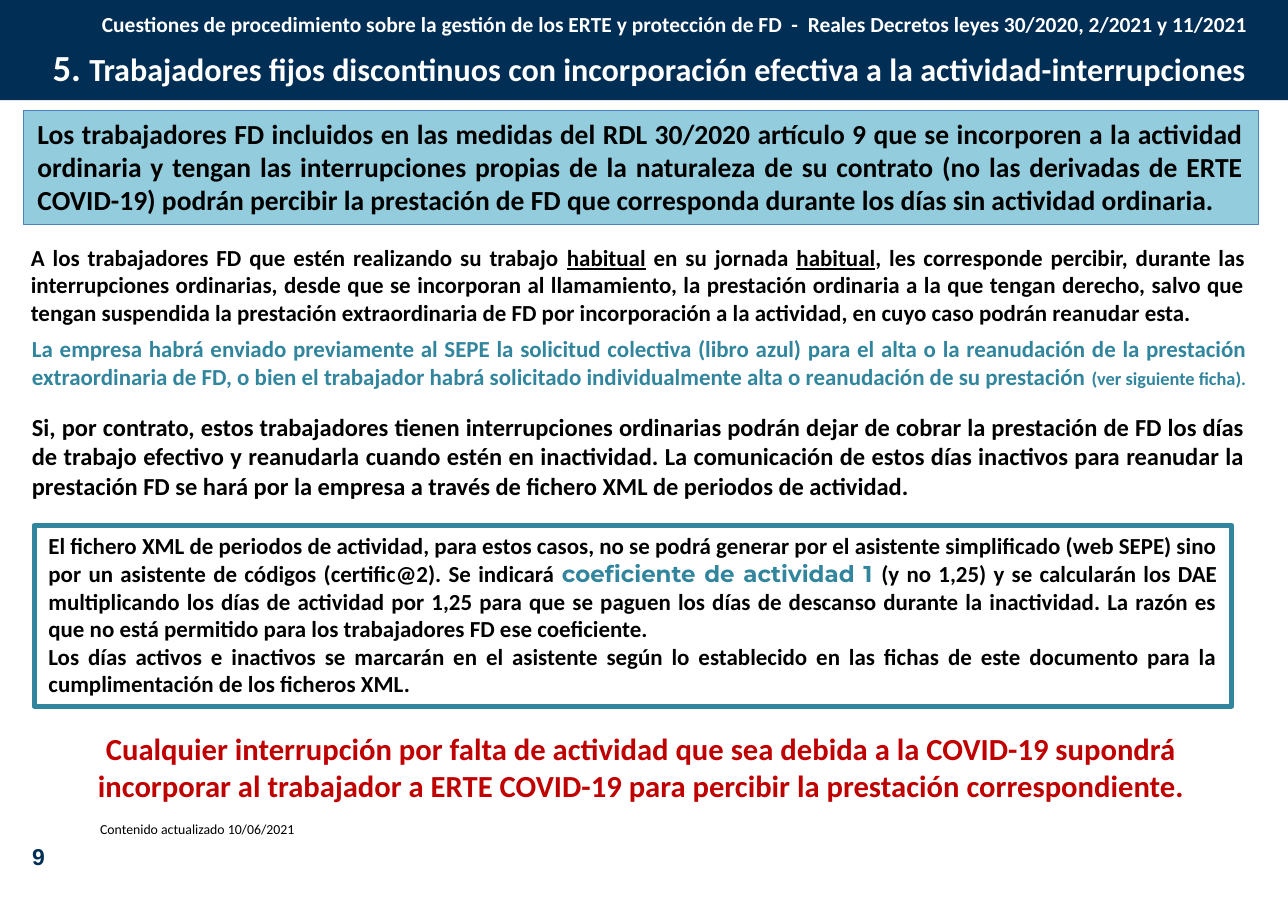
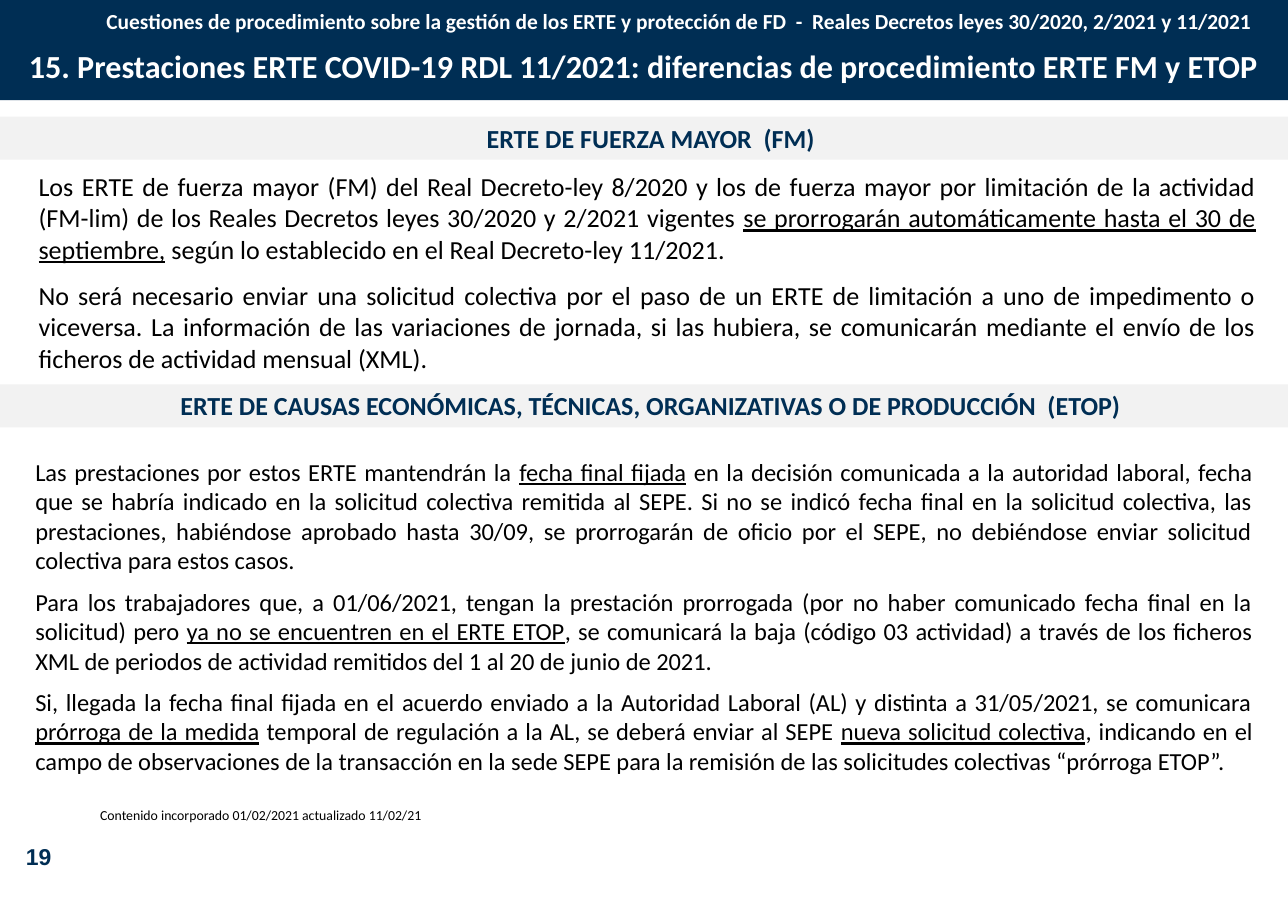
from pptx import Presentation
from pptx.dml.color import RGBColor
from pptx.enum.shapes import MSO_SHAPE
from pptx.enum.text import MSO_ANCHOR, MSO_AUTO_SIZE, PP_ALIGN
from pptx.util import Emu, Pt

PX = 9144  # 100 px to the inch
WIDTH, HEIGHT = 1169, 827
BAND_HEIGHT = 91

NAVY = RGBColor(0x00, 0x2E, 0x54)
WHITE = RGBColor(0xFF, 0xFF, 0xFF)
BLACK = RGBColor(0x00, 0x00, 0x00)
SKY = RGBColor(0x93, 0xCD, 0xDD)
BLUE = RGBColor(0x4F, 0x81, 0xBD)
TEAL = RGBColor(0x31, 0x85, 0x9C)
RED = RGBColor(0xC0, 0x00, 0x00)
GREY = RGBColor(0xF2, 0xF2, 0xF2)

WIDE = (13, 6, 13, 6)  # insets: left, top, right, bottom
NARROW = (10, 5, 10, 5)
INDENTED = (22, 5, 10, 5)

SERIES = ("Cuestiones de procedimiento sobre la gestión de los ERTE y protección de FD"
          "  -  Reales Decretos leyes 30/2020, 2/2021 y 11/2021")
UNDERLINED = {"underline": True}


def px(length):
    return Emu(length * PX)


def format_font(font, values):
    for name, value in values.items():
        if name == "color":
            font.color.rgb = value
        else:
            setattr(font, name, Pt(value) if name == "size" else value)


def write(shape, paragraphs, look, align=PP_ALIGN.JUSTIFY, insets=WIDE,
          gap=0, anchor=MSO_ANCHOR.TOP):
    """Each paragraph is a list of runs: a string, or (string, own format)."""
    frame = shape.text_frame
    frame_values = {"word_wrap": True, "auto_size": MSO_AUTO_SIZE.NONE,
                    "vertical_anchor": anchor}
    sides = ("margin_left", "margin_top", "margin_right", "margin_bottom")
    frame_values.update(zip(sides, map(px, insets)))
    for name, value in frame_values.items():
        setattr(frame, name, value)
    base = {"name": "Calibri", "color": BLACK, "bold": False, **look}
    for index, runs in enumerate(paragraphs):
        paragraph = frame.add_paragraph() if index else frame.paragraphs[0]
        paragraph.alignment = align
        paragraph.space_before = Pt(gap if index else 0)
        for item in runs:
            text, own = (item, {}) if isinstance(item, str) else item
            run = paragraph.add_run()
            run.text = text
            format_font(run.font, {**base, **own})


def add_text(slide, box, paragraphs, look, **layout):
    write(slide.shapes.add_textbox(*map(px, box)), paragraphs, look, **layout)


def add_panel(slide, box, fill=None, line=None, weight=0.75):
    panel = slide.shapes.add_shape(MSO_SHAPE.RECTANGLE, *map(px, box))
    panel.shadow.inherit = False
    if fill is None:
        panel.fill.background()
    else:
        panel.fill.solid()
        panel.fill.fore_color.rgb = fill
    if line is None:
        panel.line.fill.background()
    else:
        panel.line.color.rgb = line
        panel.line.width = Pt(weight)
    return panel


def add_header(slide, series_box, title_box, title_runs, insets):
    # Navy band lies behind the title placeholder
    title = slide.shapes.title
    band = add_panel(slide, (0, 0, WIDTH, BAND_HEIGHT), fill=NAVY)
    title.element.addprevious(band.element)
    for name, length in zip(("left", "top", "width", "height"), title_box):
        setattr(title, name, px(length))
    heading = {"size": 21, "color": WHITE, "bold": True}
    write(title, [title_runs], heading, align=PP_ALIGN.CENTER, insets=insets)
    add_text(slide, series_box, [[SERIES]], {**heading, "size": 14},
             align=PP_ALIGN.RIGHT)


def add_footer(slide, number, note_box, note):
    number_panel = add_panel(slide, (0, 755, 70, 44), fill=WHITE)
    write(number_panel, [[number]],
          {"name": "Arial", "size": 15, "color": NAVY, "bold": True},
          align=PP_ALIGN.CENTER, insets=(12, 6, 12, 6), anchor=MSO_ANCHOR.MIDDLE)
    add_text(slide, note_box, [[note]], {"size": 9},
             align=PP_ALIGN.LEFT, insets=NARROW)


def add_section_bar(slide, top, heading):
    bar = add_panel(slide, (0, top, WIDTH, 39), fill=GREY)
    write(bar, [[heading]], {"size": 17, "color": NAVY, "bold": True},
          align=PP_ALIGN.CENTER, insets=INDENTED)


def build_seasonal_workers(slide):
    add_header(slide, (-23, 4, WIDTH, 36), (5, 35, WIDTH, 53),
               [("5. ", {"size": 24}),
                "Trabajadores fijos discontinuos con incorporación efectiva "
                "a la actividad-interrupciones"], WIDE)

    # Main rule
    rule = add_panel(slide, (21, 100, 1121, 104), fill=SKY, line=BLUE)
    write(rule, [[
        "Los trabajadores FD incluidos en las medidas del RDL 30/2020 artículo 9 que se "
        "incorporen a la actividad ordinaria y tengan las interrupciones propias de la "
        "naturaleza de su contrato (no las derivadas de ERTE COVID-19) podrán percibir la "
        "prestación de FD que corresponda durante los días sin actividad ordinaria."]],
        {"size": 18, "bold": True})

    # Explanations
    body = {"size": 15, "bold": True}
    add_text(slide, (15, 215, 1128, 89), [[
        "A los trabajadores FD que estén realizando su trabajo ",
        ("habitual", UNDERLINED), " en su jornada ", ("habitual", UNDERLINED),
        ", les corresponde percibir, durante las interrupciones ordinarias, desde que se "
        "incorporan al llamamiento, la prestación ordinaria a la que tengan derecho, salvo "
        "que tengan suspendida la prestación extraordinaria de FD por incorporación a la "
        "actividad, en cuyo caso podrán reanudar esta."]], body)
    add_text(slide, (7, 299, 1135, 61), [[
        "La empresa habrá enviado previamente al SEPE la solicitud colectiva (libro azul) "
        "para el alta o la reanudación de la prestación extraordinaria de FD, o bien el "
        "trabajador habrá solicitado individualmente alta o reanudación de su prestación ",
        ("(ver siguiente ficha).", {"size": 12})]],
        {**body, "color": TEAL}, insets=INDENTED)
    add_text(slide, (16, 368, 1127, 94), [[
        "Si, por contrato, estos trabajadores tienen interrupciones ordinarias podrán dejar "
        "de cobrar la prestación de FD los días de trabajo efectivo y reanudarla cuando "
        "estén en inactividad. La comunicación de estos días inactivos para reanudar la "
        "prestación FD se hará por la empresa a través de fichero XML de periodos de "
        "actividad."]], {**body, "size": 16})

    # XML file instructions
    xml_panel = add_panel(slide, (31, 477, 1087, 164), line=TEAL, weight=3.25)
    write(xml_panel, [[
        "El fichero XML de periodos de actividad, para estos casos, no se podrá generar por "
        "el asistente simplificado (web SEPE) sino por un asistente de códigos (certific@2). "
        "Se indicará ",
        ("coeficiente de actividad 1 ", {"name": "Montserrat", "color": TEAL}),
        "(y no 1,25) y se calcularán los DAE multiplicando los días de actividad por 1,25 "
        "para que se paguen los días de descanso durante la inactividad. La razón es que no "
        "está permitido para los trabajadores FD ese coeficiente."], [
        "Los días activos e inactivos se marcarán en el asistente según lo establecido en "
        "las fichas de este documento para la cumplimentación de los ficheros XML."]], body)

    # Warning
    add_text(slide, (15, 657, 1134, 80), [
        ["Cualquier interrupción por falta de actividad que sea debida a la COVID-19 supondrá"],
        ["incorporar al trabajador a ERTE COVID-19 para percibir la prestación "
         "correspondiente."]],
        {"size": 20, "color": RED, "bold": True}, align=PP_ALIGN.CENTER)
    add_footer(slide, "9", (81, 740, 228, 25), "Contenido actualizado 10/06/2021")


def build_procedure_differences(slide):
    add_header(slide, (-19, 1, WIDTH, 36), (-3, 37, 1174, 50),
               ["15. Prestaciones ERTE COVID-19 RDL 11/2021: diferencias de procedimiento "
                "ERTE FM y ETOP"], NARROW)

    # Force majeure
    add_section_bar(slide, 106, "ERTE DE FUERZA MAYOR  (FM)")
    add_text(slide, (22, 149, 1131, 199), [[
        "Los ERTE de fuerza mayor (FM) del Real Decreto-ley 8/2020 y los de fuerza mayor por "
        "limitación de la actividad (FM-lim) de los Reales Decretos leyes 30/2020 y 2/2021 "
        "vigentes ",
        ("se prorrogarán automáticamente hasta el 30 de septiembre,", UNDERLINED),
        " según lo establecido en el Real Decreto-ley 11/2021."], [
        "No será necesario enviar una solicitud colectiva por el paso de un ERTE de "
        "limitación a uno de impedimento o viceversa. La información de las variaciones de "
        "jornada, si las hubiera, se comunicarán mediante el envío de los ficheros de "
        "actividad mensual (XML)."]], {"size": 17}, gap=10)

    # Economic, technical, organisational or production causes
    add_section_bar(slide, 349, "ERTE DE CAUSAS ECONÓMICAS, TÉCNICAS, ORGANIZATIVAS "
                                "O DE PRODUCCIÓN  (ETOP)")
    add_text(slide, (19, 409, 1131, 305), [[
        "Las prestaciones por estos ERTE mantendrán la ",
        ("fecha final fijada", UNDERLINED),
        " en la decisión comunicada a la autoridad laboral, fecha que se habría indicado en "
        "la solicitud colectiva remitida al SEPE. Si no se indicó fecha final en la "
        "solicitud colectiva, las prestaciones, habiéndose aprobado hasta 30/09, se "
        "prorrogarán de oficio por el SEPE, no debiéndose enviar solicitud colectiva para "
        "estos casos."], [
        "Para los trabajadores que, a 01/06/2021, tengan la prestación prorrogada (por no "
        "haber comunicado fecha final en la solicitud) pero ",
        ("ya no se encuentren en el ERTE ETOP", UNDERLINED),
        ", se comunicará la baja (código 03 actividad) a través de los ficheros XML de "
        "periodos de actividad remitidos del 1 al 20 de junio de 2021."], [
        "Si, llegada la fecha final fijada en el acuerdo enviado a la Autoridad Laboral (AL) "
        "y distinta a 31/05/2021, se comunicara ",
        ("prórroga de la medida", UNDERLINED),
        " temporal de regulación a la AL, se deberá enviar al SEPE ",
        ("nueva solicitud colectiva", UNDERLINED),
        ", indicando en el campo de observaciones de la transacción en la sede SEPE para la "
        "remisión de las solicitudes colectivas “prórroga ETOP”."]], {"size": 16}, gap=8)
    add_footer(slide, "19", (81, 727, 346, 25),
               "Contenido incorporado 01/02/2021 actualizado 11/02/21")


def main():
    deck = Presentation()
    deck.slide_width, deck.slide_height = px(WIDTH), px(HEIGHT)
    title_only = deck.slide_layouts[5]
    for build in (build_seasonal_workers, build_procedure_differences):
        build(deck.slides.add_slide(title_only))
    deck.save("out.pptx")


if __name__ == "__main__":
    main()
